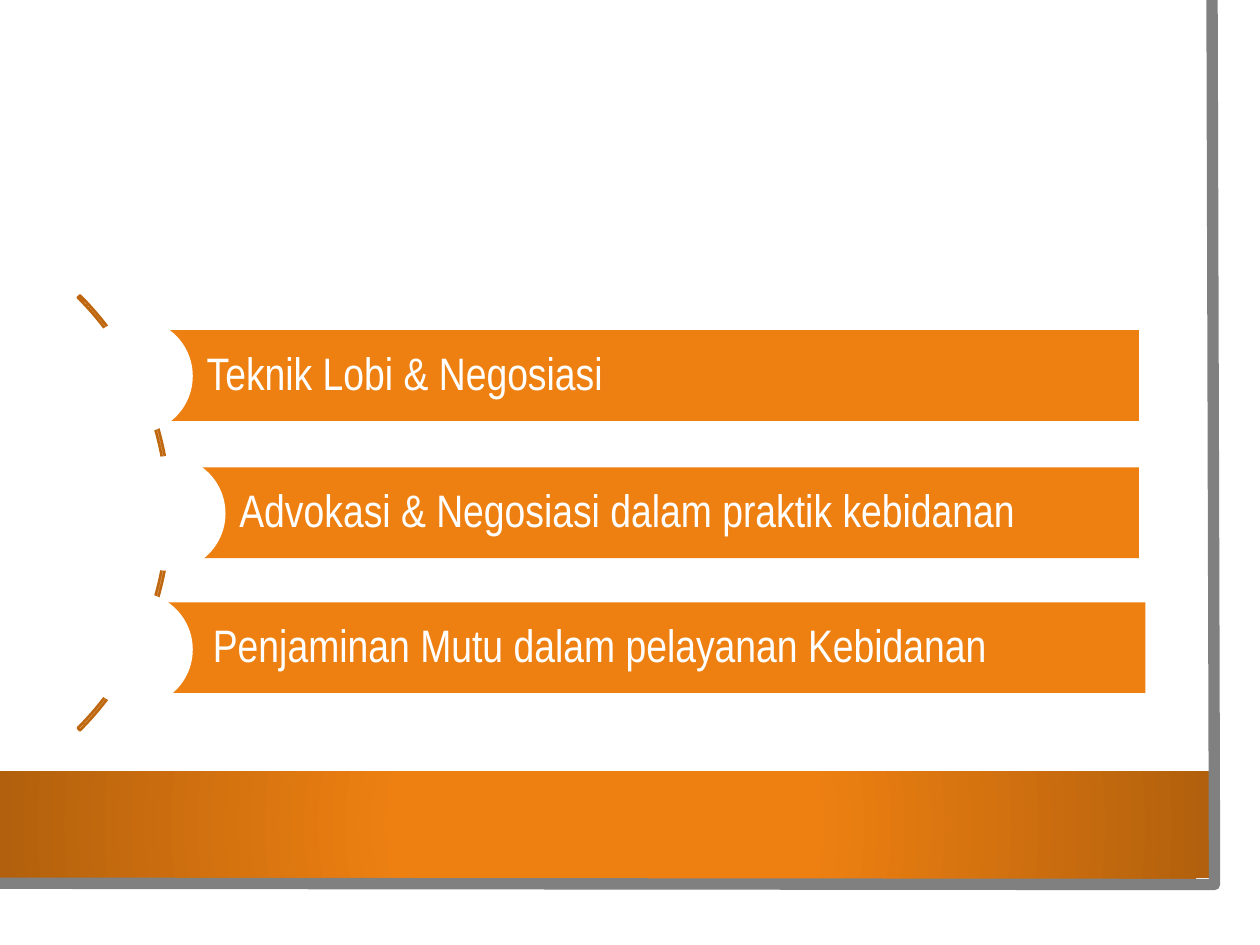
"""Build a slide listing three midwifery topics along a curved arc."""
import lxml.etree
import pptx
import pptx.dml.color
import pptx.enum.shapes
import pptx.enum.text
import pptx.oxml.ns
import pptx.util

Inches = pptx.util.Inches
SHAPES = pptx.enum.shapes.MSO_SHAPE

TOPICS = [
    {"label": "Teknik Lobi & Negosiasi", "bar": (1.07, 2.62), "dot": (0.62, 2.53)},
    {"label": "Advokasi & Negosiasi dalam praktik kebidanan", "bar": (1.33, 3.71), "dot": (0.88, 3.62)},
    {"label": "Penjaminan Mutu dalam pelayanan Kebidanan", "bar": (1.12, 4.78), "dot": (0.62, 4.7)},
]
BAR_WIDTHS = (7.97, 7.71, 7.97)
BAR_HEIGHT = 0.72
DOT_SIZE = 0.91
ARC = {"at": (-3.53, 1.63, 4.88, 4.88), "adjust": (189, 27, 0.005)}
BAND = (0, 6.12, 9.6, 0.85)
EDGE = [(9.62, 0), (9.64, 7.02), (-0.02, 7.01)]
THEME = {
    "paper": "FFFFFF",
    "accent": "EE8011",
    "dark": "B2600D",
    "arc": "BF670E",
    "edge": "808080",
    "font": "Arial Narrow",
    "size": 26,
    "arc_line": 1.5,
    "edge_line": 6.5,
}


def color(name):
    return pptx.dml.color.RGBColor.from_string(THEME[name])


def apply(target, values):
    for name, value in values.items():
        setattr(target, name, value)


def style(shape, fill=None, line=None):
    shape.shadow.inherit = False
    if fill:
        shape.fill.solid()
        shape.fill.fore_color.rgb = color(fill)
    else:
        shape.fill.background()
    if line:
        shape.line.color.rgb = color(line)
        shape.line.width = pptx.util.Pt(THEME[line + "_line"])
    else:
        shape.line.fill.background()


def add_shape(page, kind, at, fill=None, line=None):
    shape = page.shapes.add_shape(kind, *map(Inches, at))
    style(shape, fill, line)
    return shape


def add_gradient(shape):
    qn = pptx.oxml.ns.qn
    gradient = lxml.etree.Element(qn("a:gradFill"), rotWithShape="1")
    stops = lxml.etree.SubElement(gradient, qn("a:gsLst"))
    for position, name in ((34, "accent"), (100, "dark")):
        stop = lxml.etree.SubElement(stops, qn("a:gs"), pos=str(position * 1000))
        lxml.etree.SubElement(stop, qn("a:srgbClr"), val=THEME[name])
    course = lxml.etree.SubElement(gradient, qn("a:path"), path="circle")
    center = dict.fromkeys("ltrb", "50000")
    lxml.etree.SubElement(course, qn("a:fillToRect"), center)
    properties = shape.element.spPr
    properties.replace(properties.find(qn("a:noFill")), gradient)


def add_frame(page):
    add_shape(page, SHAPES.RECTANGLE, (0, 0, 9.83, 7.27), "paper")
    add_gradient(add_shape(page, SHAPES.RECTANGLE, BAND))
    start, *corners = [tuple(map(Inches, point)) for point in EDGE]
    builder = page.shapes.build_freeform(*start)
    builder.add_line_segments(corners, close=False)
    style(builder.convert_to_shape(), line="edge")


def add_label(box, text):
    apply(box.text_frame, {
        "word_wrap": True,
        "vertical_anchor": pptx.enum.text.MSO_ANCHOR.MIDDLE,
        "margin_left": Inches(0.57),
        "margin_top": Inches(0.07),
        "margin_right": Inches(0.07),
        "margin_bottom": Inches(0.07),
    })
    para = box.text_frame.paragraphs[0]
    apply(para, {"alignment": pptx.enum.text.PP_ALIGN.LEFT, "line_spacing": 0.9})
    span = para.add_run()
    span.text = text
    apply(span.font, {"name": THEME["font"], "size": pptx.util.Pt(THEME["size"])})
    span.font.color.rgb = color("paper")


def add_topics(page):
    arc = add_shape(page, SHAPES.BLOCK_ARC, ARC["at"], line="arc")
    for index, value in enumerate(ARC["adjust"]):
        arc.adjustments[index] = value
    for topic, width in zip(TOPICS, BAR_WIDTHS):
        bar = add_shape(page, SHAPES.RECTANGLE, (*topic["bar"], width, BAR_HEIGHT), "accent")
        add_label(bar, topic["label"])
        add_shape(page, SHAPES.OVAL, (*topic["dot"], DOT_SIZE, DOT_SIZE), "paper")


def main():
    deck = pptx.Presentation()
    apply(deck, {"slide_width": Inches(10), "slide_height": Inches(7.5)})
    page = deck.slides.add_slide(deck.slide_layouts[6])
    add_frame(page)
    add_topics(page)
    deck.save("out.pptx")


if __name__ == "__main__":
    main()
